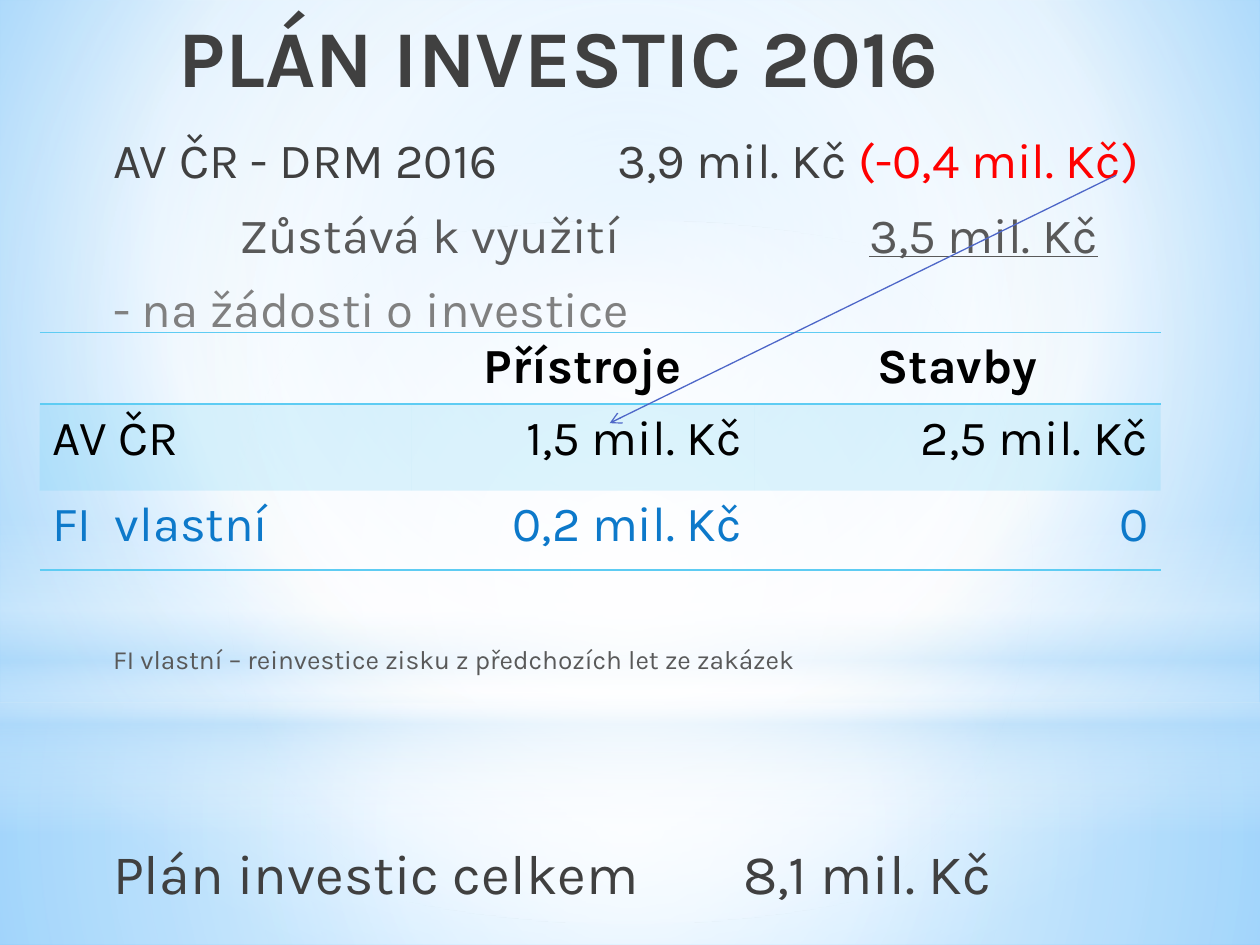
from lxml.etree import SubElement
from pptx import Presentation
from pptx.dml.color import RGBColor
from pptx.enum.shapes import MSO_CONNECTOR, MSO_SHAPE
from pptx.enum.text import MSO_ANCHOR, PP_ALIGN
from pptx.oxml import parse_xml
from pptx.oxml.ns import nsdecls, qn
from pptx.util import Cm, Pt

# Content
TITLE = "PLÁN INVESTIC 2016"
GREY, DARK, PALE = "595959", "404040", "808080"
BODY = [  # space before, runs of (text, size, colour, underline)
    (4, [("AV ČR - DRM 2016\t3,9 mil. Kč ", 28.1, DARK, False),
         ("(-0,4 mil. Kč)", 28.1, "FF0000", False)]),
    (5.7, [("\tZůstává k využití\t\t", 28.1, GREY, False),
           ("3,5 mil. Kč", 28.1, GREY, True)]),
    (5.7, [("- na žádosti o investice", 28.1, PALE, False)]),
    (172, [("FI vlastní – reinvestice zisku z předchozích let ze zakázek",
            15, GREY, False)]),
    (90.5, [("Plán investic celkem \t8,1 mil. Kč", 31.9, DARK, False)]),
]
ROWS = [
    ["", "Přístroje", "Stavby"],
    ["AV ČR", "1,5 mil. Kč", "2,5 mil. Kč"],
    ["FI  vlastní", "0,2 mil. Kč", "0"],
]
COLS, HIGH = [7.49, 6.91, 8.2], [1.4, 1.75, 1.6]
INKS = ["000000", "000000", "0D79CA"]
CYAN = "5ECCF3"
TAB, STOPS = 2.54, 8  # even tab stops in the body

# Backdrop: gradient stops are (position, colour, opacity)
MID = (50, 50, 50, 50)
SKY = [(0, "9ED5FF", 100), (60, "FFFFFF", 100), (100, "5BB9FF", 100)]
GLOWS = [  # shape, left, top, width, height, stops, centre (None: downwards)
    (MSO_SHAPE.RECTANGLE, 0, 14.17, 25.4, 4.88,
     [(0, "FFFFFF", 91), (37, "FFFFFF", 76), (100, "B4DCFA", 79)], MID),
    (MSO_SHAPE.RECTANGLE, 0, 0, 25.4, 14.17,
     [(0, "FFFFFF", 89), (48, "FFFFFF", 62), (100, "B4DCFA", 79)], MID),
    (MSO_SHAPE.RECTANGLE, 0, 10.46, 25.4, 6.35,
     [(0, "FFFFFF", 0), (29, "FFFFFF", 30), (45, "B4DCFA", 40),
      (55, "FFFFFF", 26), (65, "B4DCFA", 60), (100, "FFFFFF", 0)], None),
    (MSO_SHAPE.OVAL, 0, 4.45, 25.4, 14.17,
     [(0, "FFFFFF", 100), (56, "FFFFFF", 0)], MID),
]


def rgb(code):
    return RGBColor.from_string(code)


def blend(fill, root, stops, mid):
    """Swap a solid fill below root for a gradient."""
    fill.solid()
    old = next(root.iter(qn("a:solidFill")))
    marks = "".join(
        f'<a:gs pos="{pos * 1000}"><a:srgbClr val="{code}">'
        f'<a:alpha val="{alpha * 1000}"/></a:srgbClr></a:gs>'
        for pos, code, alpha in stops)
    if mid:
        sides = " ".join(f'{s}="{v * 1000}"' for s, v in zip("ltrb", mid))
        way = f'<a:path path="circle"><a:fillToRect {sides}/></a:path>'
    else:
        way = '<a:lin ang="5400000" scaled="0"/>'
    old.getparent().replace(old, parse_xml(
        f'<a:gradFill {nsdecls("a")} rotWithShape="1">'
        f'<a:gsLst>{marks}</a:gsLst>{way}</a:gradFill>'))


def write(para, text, code, **form):
    run = para.add_run()
    run.text = text
    run.font.name = "Karla"
    run.font.color.rgb = rgb(code)
    for key, val in form.items():
        setattr(run.font, key, val)


def edge(cell, *sides):
    """Rule the given sides of a cell; borders precede its fill."""
    props = cell._tc.get_or_add_tcPr()
    for spot, side in enumerate(sides):
        props.insert(spot, parse_xml(
            f'<a:{side} {nsdecls("a")} w="12700"><a:solidFill>'
            f'<a:srgbClr val="{CYAN}"/></a:solidFill></a:{side}>'))


deck = Presentation()
deck.slide_width, deck.slide_height = Cm(25.4), Cm(19.05)
slide = deck.slides.add_slide(deck.slide_layouts[5])
shapes = slide.shapes

# Background and glows
blend(slide.background.fill, slide._element, SKY, (20, 10, 20, 60))
for kind, *box, stops, mid in GLOWS:
    glow = shapes.add_shape(kind, *map(Cm, box))
    glow.shadow.inherit = False
    glow.line.fill.background()
    blend(glow.fill, glow._element.spPr, stops, mid)

# Title, brought in front of the glows
title = shapes.title
shapes._spTree.append(title._element)
place = {"left": 1.09, "top": 0, "width": 18.08, "height": 3.18}
for key, val in place.items():
    setattr(title, key, Cm(val))
frame = title.text_frame
frame.vertical_anchor = MSO_ANCHOR.TOP
frame.margin_top = Cm(0.15)
frame.paragraphs[0].alignment = PP_ALIGN.RIGHT
write(frame.paragraphs[0], TITLE, DARK, size=Pt(46), bold=True)

# Body lines
frame = shapes.add_textbox(Cm(2.03), Cm(2.49), Cm(23.37), Cm(15.82)).text_frame
frame.word_wrap = True
for num, (gap, runs) in enumerate(BODY):
    para = frame.add_paragraph() if num else frame.paragraphs[0]
    para.space_before, para.space_after = Pt(gap), Pt(3)
    tabs = SubElement(para._p.get_or_add_pPr(), qn("a:tabLst"))
    for stop in range(1, STOPS + 1):
        SubElement(tabs, qn("a:tab"), pos=str(Cm(TAB * stop)), algn="l")
    for text, size, code, under in runs:
        write(para, text, code, size=Pt(size), underline=under)

# Table
table = shapes.add_table(3, 3, Cm(0.8), Cm(6.7), Cm(sum(COLS)),
                         Cm(sum(HIGH))).table
table.first_row = table.horz_banding = False
for col, wide in zip(table.columns, COLS):
    col.width = Cm(wide)
for r, (row, tall) in enumerate(zip(ROWS, HIGH)):
    table.rows[r].height = Cm(tall)
    for c, text in enumerate(row):
        cell = table.cell(r, c)
        if r == 1:
            cell.fill.solid()
            cell.fill.fore_color.rgb = rgb(CYAN)
            tint = next(cell._tc.iter(qn("a:srgbClr")))
            SubElement(tint, qn("a:alpha"), val="20000")
        else:
            cell.fill.background()
            edge(cell, *(["lnB"] if r else ["lnT", "lnB"]))
        para = cell.text_frame.paragraphs[0]
        if c:
            para.alignment = PP_ALIGN.RIGHT if r else PP_ALIGN.CENTER
        if text:
            write(para, text, INKS[r], size=Pt(28), bold=r == 0)
style = next(table._tbl.iter(qn("a:tableStyleId")))
style.text = "{2D5ABB26-0587-4C30-8999-92F81FD0307C}"  # no style, no grid

# Arrow from the cut to the instruments
arrow = shapes.add_connector(MSO_CONNECTOR.STRAIGHT, Cm(22.5), Cm(3.53),
                             Cm(12.29), Cm(8.53))
arrow.line.color.rgb = rgb("4E67C8")
arrow.line.width = Pt(0.75)
SubElement(arrow.line._get_or_add_ln(), qn("a:tailEnd"), type="arrow")
SubElement(arrow._element.spPr, qn("a:effectLst"))

deck.save("out.pptx")
